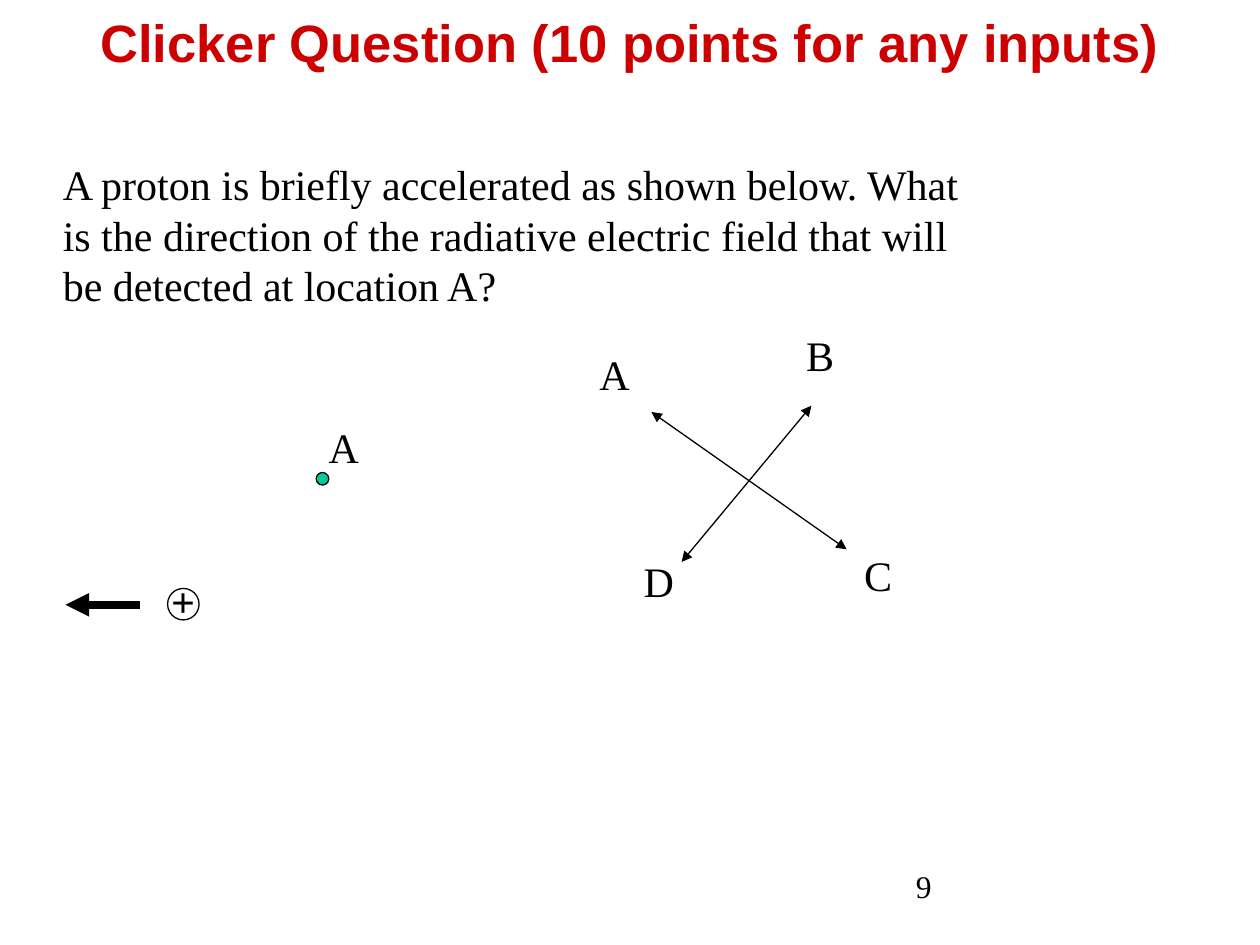
from lxml.etree import SubElement
from pptx import Presentation
from pptx.dml.color import RGBColor
from pptx.enum.shapes import MSO_CONNECTOR, MSO_SHAPE
from pptx.enum.text import MSO_ANCHOR as Anchor, MSO_AUTO_SIZE as AutoSize, PP_ALIGN as Align
from pptx.oxml.ns import qn
from pptx.util import Inches, Pt

RED = RGBColor(0xCC, 0x00, 0x00)
BLACK = RGBColor(0x00, 0x00, 0x00)
GREEN = RGBColor(0x00, 0xCC, 0x99)


class SlideBuilder:
    """Holds the shared style and the slide being drawn."""

    body_format = {"name": "Times New Roman", "size": Pt(24), "bold": False}
    ink = BLACK
    thin = 0.75

    def __init__(self, slide):
        self.slide = slide

    def text(self, wording, left, top, width, height, color=None, align=Align.LEFT,
             anchor=Anchor.TOP, wrap=True, grow=False, **font_format):
        box = self.slide.shapes.add_textbox(*map(Inches, (left, top, width, height)))
        frame = box.text_frame
        frame_format = {
            "word_wrap": wrap,
            "vertical_anchor": anchor,
            "auto_size": AutoSize.SHAPE_TO_FIT_TEXT if grow else AutoSize.NONE,
        }
        for key, value in frame_format.items():
            setattr(frame, key, value)
        paragraph = frame.paragraphs[0]
        paragraph.alignment = align
        run = paragraph.add_run()
        run.text = wording
        for key, value in {**self.body_format, **font_format}.items():
            setattr(run.font, key, value)
        run.font.color.rgb = color or self.ink

    def label(self, wording, left, top, width, **font_format):
        self.text(wording, left, top, width, 0.5, wrap=False, grow=True, **font_format)

    def circle(self, left, top, diameter, fill=None):
        circle = self.slide.shapes.add_shape(
            MSO_SHAPE.OVAL, *map(Inches, (left, top, diameter, diameter)))
        circle.shadow.inherit = False
        if fill is None:
            circle.fill.background()
        else:
            circle.fill.solid()
            circle.fill.fore_color.rgb = fill
        self.stroke(circle.line, self.thin)

    def arrow(self, start, end, weight=None, ends=("headEnd", "tailEnd")):
        arrow = self.slide.shapes.add_connector(
            MSO_CONNECTOR.STRAIGHT, *map(Inches, (*start, *end)))
        self.stroke(arrow.line, weight or self.thin)
        properties = arrow.line._get_or_add_ln()
        for end_tag in ends:
            SubElement(properties, qn(f"a:{end_tag}"), type="triangle")
        SubElement(arrow._element.spPr, qn("a:effectLst"))

    def stroke(self, line, weight):
        line.color.rgb = self.ink
        line.width = Pt(weight)


def main():
    deck = Presentation()
    deck.slide_width, deck.slide_height = Inches(10), Inches(7.5)
    builder = SlideBuilder(deck.slides.add_slide(deck.slide_layouts[6]))

    builder.text("Clicker Question (10 points for any inputs)", 0, -0.17, 10, 1,
                 color=RED, align=Align.CENTER, anchor=Anchor.MIDDLE,
                 name="Arial", size=Pt(30), bold=True)
    builder.text("A proton is briefly accelerated as shown below. What is the direction "
                 "of the radiative electric field that will be detected at location A?",
                 0.4, 1.21, 7.43, 1.3, grow=True)

    # Proton with its acceleration
    builder.circle(1.33, 4.67, 0.25)
    builder.label("+", 1.26, 4.52, 0.39, bold=True)
    builder.arrow((1.11, 4.8), (0.52, 4.8), weight=4.5, ends=("tailEnd",))

    # Detection point
    builder.label("A", 2.51, 3.3, 0.44)
    builder.circle(2.51, 3.75, 0.1, fill=GREEN)

    # Possible field directions
    builder.arrow((6.44, 3.22), (5.41, 4.46))
    builder.arrow((5.17, 3.27), (6.72, 4.36))
    for choice, left, top, width in (
        ("A", 4.66, 2.72, 0.44),
        ("B", 6.3, 2.57, 0.42),
        ("C", 6.76, 4.31, 0.42),
        ("D", 5.01, 4.36, 0.44),
    ):
        builder.label(choice, left, top, width)

    builder.text("9", 7.17, 6.83, 2.08, 0.5, size=Pt(18))
    deck.save("out.pptx")


if __name__ == "__main__":
    main()
